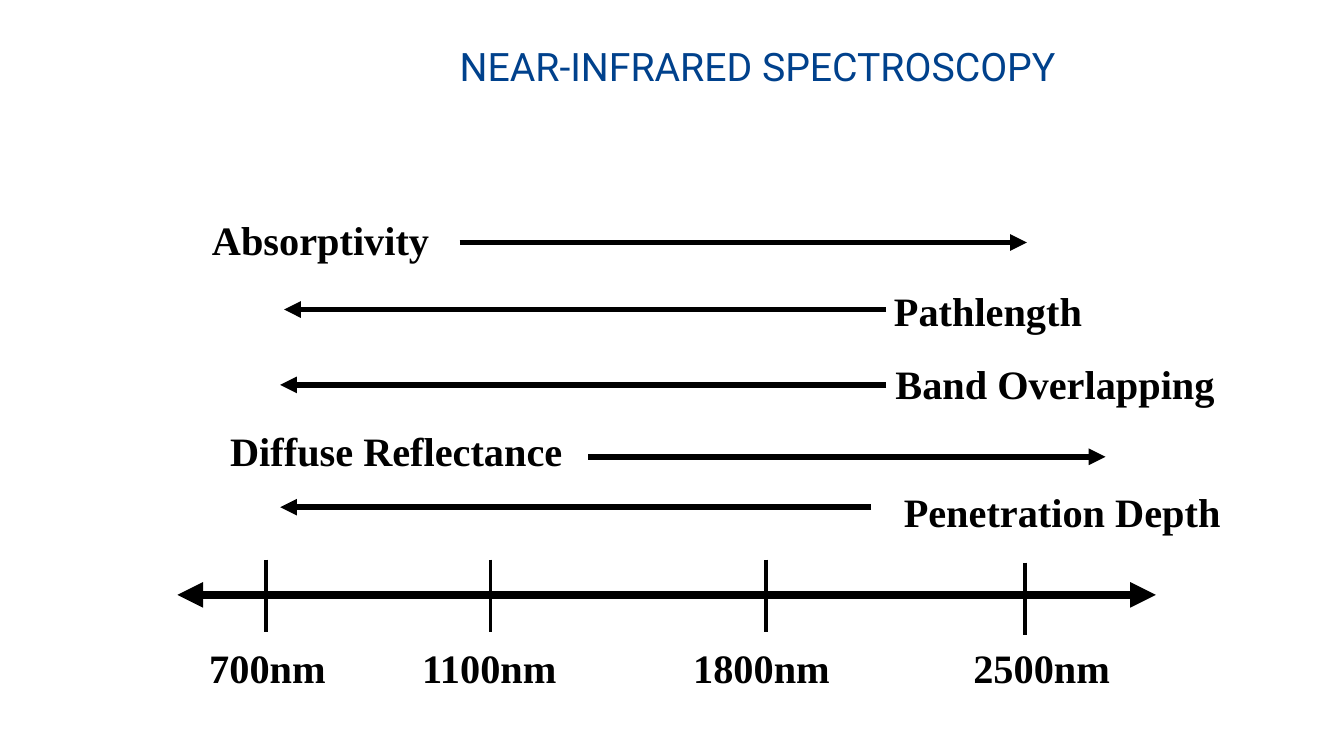
from dataclasses import dataclass

from lxml.etree import SubElement
from pptx import Presentation
from pptx.dml.color import RGBColor
from pptx.enum.shapes import MSO_CONNECTOR
from pptx.enum.text import MSO_ANCHOR, MSO_AUTO_SIZE, PP_ALIGN
from pptx.oxml.ns import qn
from pptx.slide import Slide
from pptx.util import Cm, Pt

COLORS = {"title": "00418C", "ink": "000000"}
LABEL_HEIGHT = 1.55
TICK_HEIGHT = 1.82
TICK_LABEL_TOP = 16.05
AXIS_Y = 14.99


@dataclass(frozen=True)
class Label:
    text: str
    center: float
    top: float
    width: float


@dataclass(frozen=True)
class Trend:
    """A property and the arrow towards which it grows, in cm."""
    label: Label
    start: float
    end: float
    y: float


@dataclass(frozen=True)
class Tick:
    x: float
    top: float
    label: Label


TRENDS = [
    Trend(Label("Absorptivity", 8.08, 5.28, 6.15), 11.58, 25.88, 6.11),
    Trend(Label("Pathlength", 24.9, 7.06, 5.41), 22.33, 7.16, 7.8),
    Trend(Label("Band Overlapping", 26.59, 8.89, 8.74), 22.33, 7.06, 9.7),
    Trend(Label("Diffuse Reflectance", 9.99, 10.59, 9.07), 14.83, 27.86, 11.51),
    Trend(Label("Penetration Depth", 26.77, 12.12, 8.64), 21.95, 7.06, 12.78),
]
TICKS = [
    Tick(6.71, 14.1, Label("700nm", 6.74, TICK_LABEL_TOP, 3.58)),
    Tick(12.36, 14.1, Label("1100nm", 12.33, TICK_LABEL_TOP, 4.04)),
    Tick(19.3, 14.1, Label("1800nm", 19.19, TICK_LABEL_TOP, 4.09)),
    Tick(25.83, 14.18, Label("2500nm", 26.25, TICK_LABEL_TOP, 4.09)),
]


def color(name: str) -> RGBColor:
    return RGBColor.from_string(COLORS[name])


def add_title(slide: Slide, text: str) -> None:
    sp = slide.shapes.title
    sp.left, sp.top, sp.width, sp.height = Cm(11.33), Cm(0.46), Cm(20.8), Cm(2.64)
    tf = sp.text_frame
    tf.auto_size = MSO_AUTO_SIZE.NONE
    tf.vertical_anchor = MSO_ANCHOR.MIDDLE
    p = tf.paragraphs[0]
    p.alignment = PP_ALIGN.LEFT
    p.line_spacing = 0.8
    r = p.add_run()
    r.text = text
    r.font.name, r.font.size = "Roboto", Pt(28)
    r.font.color.rgb = color("title")


def add_line(slide: Slide, x1: float, y1: float, x2: float, y2: float,
             weight: float, ends: tuple[str, ...] = ()) -> None:
    """Draw a line with arrowheads at the given ends (headEnd, tailEnd)."""
    line = slide.shapes.add_connector(
        MSO_CONNECTOR.STRAIGHT, Cm(x1), Cm(y1), Cm(x2), Cm(y2))
    line.line.width = Pt(weight)
    line.line.color.rgb = color("ink")
    ln = line.line._get_or_add_ln()
    for end in ends:
        SubElement(ln, qn(f"a:{end}"), type="triangle")
    SubElement(line._element.spPr, qn("a:effectLst"))


def add_label(slide: Slide, label: Label) -> None:
    sp = slide.shapes.add_textbox(
        Cm(label.center - label.width / 2), Cm(label.top),
        Cm(label.width), Cm(LABEL_HEIGHT))
    tf = sp.text_frame
    tf.word_wrap = False
    tf.auto_size = MSO_AUTO_SIZE.SHAPE_TO_FIT_TEXT
    tf.margin_left = tf.margin_right = Cm(0.3)
    tf.margin_top = tf.margin_bottom = Cm(0.15)
    p = tf.paragraphs[0]
    p.alignment = PP_ALIGN.CENTER
    r = p.add_run()
    r.text = label.text
    r.font.name, r.font.size, r.font.bold = "Times New Roman", Pt(28.8), True
    r.font.color.rgb = color("ink")


def main() -> None:
    prs = Presentation()
    prs.slide_width, prs.slide_height = Cm(33.87), Cm(19.05)
    slide = prs.slides.add_slide(prs.slide_layouts[5])
    add_title(slide, "NEAR-INFRARED SPECTROSCOPY")
    for trend in TRENDS:
        add_line(slide, trend.start, trend.y, trend.end, trend.y, 4, ("tailEnd",))
        add_label(slide, trend.label)
    add_line(slide, 4.47, AXIS_Y, 29.13, AXIS_Y, 6.13, ("headEnd", "tailEnd"))
    for tick in TICKS:
        add_line(slide, tick.x, tick.top, tick.x, tick.top + TICK_HEIGHT, 2.63)
        add_label(slide, tick.label)
    prs.save("out.pptx")


if __name__ == "__main__":
    main()
